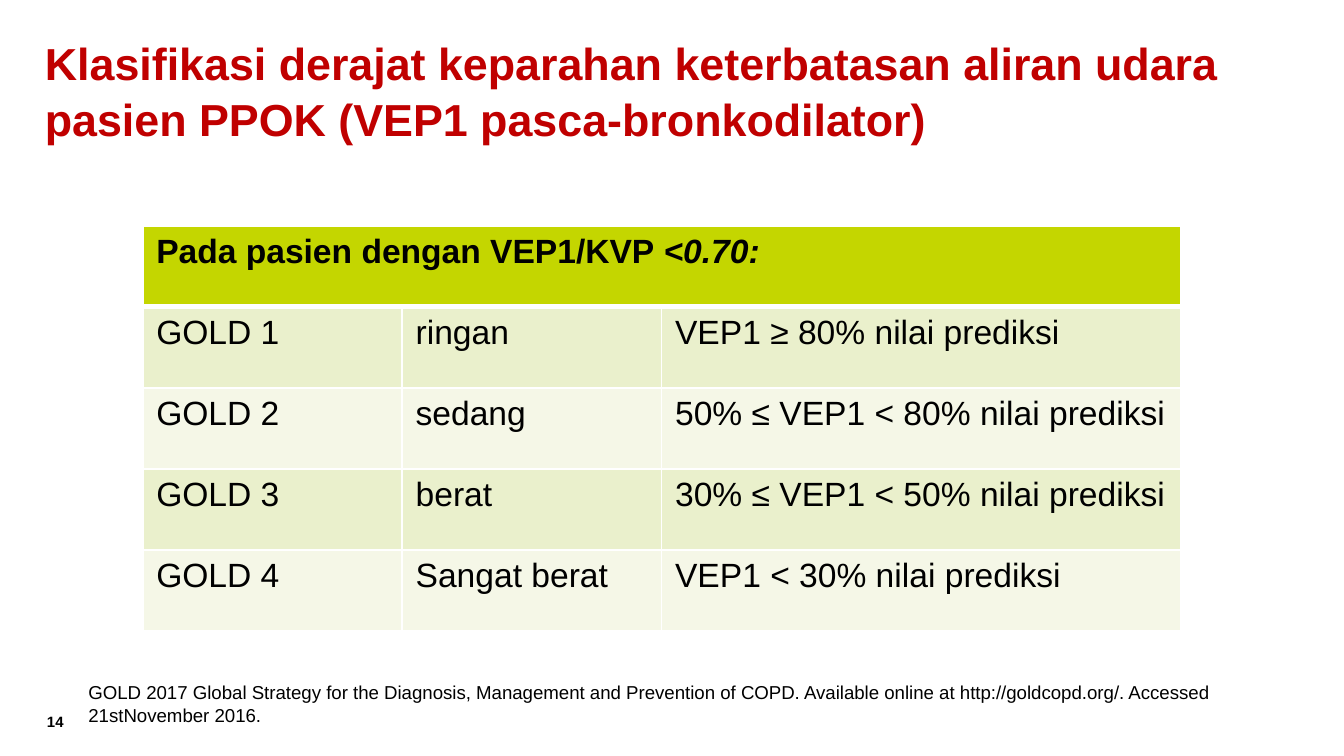
from dataclasses import dataclass

from lxml import etree
from pptx import Presentation
from pptx.dml.color import RGBColor
from pptx.enum.text import MSO_ANCHOR, MSO_AUTO_SIZE, PP_ALIGN
from pptx.oxml.ns import qn
from pptx.util import Pt


@dataclass(frozen=True)
class Theme:
    font: str = "Arial"
    title_color: str = "C00000"
    ink: str = "000000"
    border: str = "FFFFFF"
    header: str = "C4D600"
    bands: tuple = ("EAF0CC", "F5F7E7")
    title_size: float = 24
    table_size: float = 18
    source_size: float = 10
    number_size: float = 8


class SlideBuilder:
    def __init__(self, slide, theme):
        self.slide = slide
        self.theme = theme

    def style(self, paragraph, size, color=None, bold=False):
        font = paragraph.font
        font.name = self.theme.font
        font.size = Pt(size)
        font.bold = bold
        font.color.rgb = RGBColor.from_string(color or self.theme.ink)

    def frame(self, shape, insets, anchor=MSO_ANCHOR.TOP):
        """Set wrapping, anchor and insets (left, top, right, bottom)."""
        frame = shape.text_frame
        frame.word_wrap = True
        frame.auto_size = MSO_AUTO_SIZE.NONE
        frame.vertical_anchor = anchor
        (frame.margin_left, frame.margin_top,
         frame.margin_right, frame.margin_bottom) = map(Pt, insets)
        return frame

    def title(self, text, left, top, width, height):
        title = self.slide.shapes.title
        title.left, title.top, title.width, title.height = map(
            Pt, (left, top, width, height))
        paragraph = self.frame(title, (5.3, 6, 5.3, 0)).paragraphs[0]
        paragraph.text = text
        paragraph.alignment = PP_ALIGN.LEFT
        paragraph.line_spacing = 1.05
        paragraph.space_before = Pt(0)
        self.style(paragraph, self.theme.title_size, self.theme.title_color, True)

    def text(self, text, box, size, insets=(0, 0, 0, 0),
             anchor=MSO_ANCHOR.TOP, bold=False):
        shape = self.slide.shapes.add_textbox(*map(Pt, box))
        paragraph = self.frame(shape, insets, anchor).paragraphs[0]
        paragraph.text = text
        self.style(paragraph, size, bold=bold)

    def borders(self, cell, bottom=1):
        properties = cell._tc.get_or_add_tcPr()
        sides = {"a:lnL": 1, "a:lnR": 1, "a:lnT": 1, "a:lnB": bottom}
        for position, (side, width) in enumerate(sides.items()):
            line = etree.Element(qn(side), w=str(Pt(width)))
            fill = etree.SubElement(line, qn("a:solidFill"))
            etree.SubElement(fill, qn("a:srgbClr"), val=self.theme.border)
            properties.insert(position, line)

    def cell(self, cell, fill, bottom=1):
        cell.fill.solid()
        cell.fill.fore_color.rgb = RGBColor.from_string(fill)
        self.borders(cell, bottom)

    def table(self, heading, grades, left, top, column_widths, row_height):
        """Add a merged heading row above banded rows; heading is (plain, italic)."""
        row_count = len(grades) + 1
        table = self.slide.shapes.add_table(
            row_count, len(column_widths), Pt(left), Pt(top),
            Pt(sum(column_widths)), Pt(row_height * row_count)).table
        for column, width in zip(table.columns, column_widths):
            column.width = Pt(width)
        for row in table.rows:
            row.height = Pt(row_height)

        for cell in table.rows[0].cells:
            self.cell(cell, self.theme.header, bottom=3)
        first = table.cell(0, 0)
        first.merge(table.cell(0, len(column_widths) - 1))
        paragraph = first.text_frame.paragraphs[0]
        for part, italic in zip(heading, (False, True)):
            run = paragraph.add_run()
            run.text = part
            run.font.italic = italic
        self.style(paragraph, self.theme.table_size, bold=True)

        for index, grade in enumerate(grades):
            band = self.theme.bands[index % len(self.theme.bands)]
            for column, value in enumerate(grade):
                cell = table.cell(index + 1, column)
                cell.text = value
                self.cell(cell, band)
                self.style(cell.text_frame.paragraphs[0], self.theme.table_size)


def main():
    presentation = Presentation()
    presentation.slide_width, presentation.slide_height = Pt(720), Pt(405)
    theme = Theme()
    builder = SlideBuilder(
        presentation.slides.add_slide(presentation.slide_layouts[5]), theme)

    builder.title(
        "Klasifikasi derajat keparahan keterbatasan aliran udara "
        "pasien PPOK (VEP1 pasca-bronkodilator)", 18.7, 11.5, 652.3, 39.6)
    builder.text("14", (25.2, 381.6, 31, 13), theme.number_size, bold=True)
    builder.table(
        ("Pada pasien dengan VEP1/KVP ", "<0.70:"),
        [("GOLD 1", "ringan", "VEP1 ≥ 80% nilai prediksi"),
         ("GOLD 2", "sedang", "50% ≤ VEP1 < 80% nilai prediksi"),
         ("GOLD 3", "berat", "30% ≤ VEP1 < 50% nilai prediksi"),
         ("GOLD 4", "Sangat berat", "VEP1 < 30% nilai prediksi")],
        76.5, 121, (139, 139, 278), 43.4)
    builder.text(
        "GOLD 2017 Global Strategy for the Diagnosis, Management and Prevention "
        "of COPD. Available online at http://goldcopd.org/. Accessed "
        "21stNovember 2016.",
        (40.3, 350.6, 645, 44), theme.source_size,
        insets=(7.2, 3.6, 7.2, 5.6), anchor=MSO_ANCHOR.BOTTOM)
    presentation.save("out.pptx")


if __name__ == "__main__":
    main()
